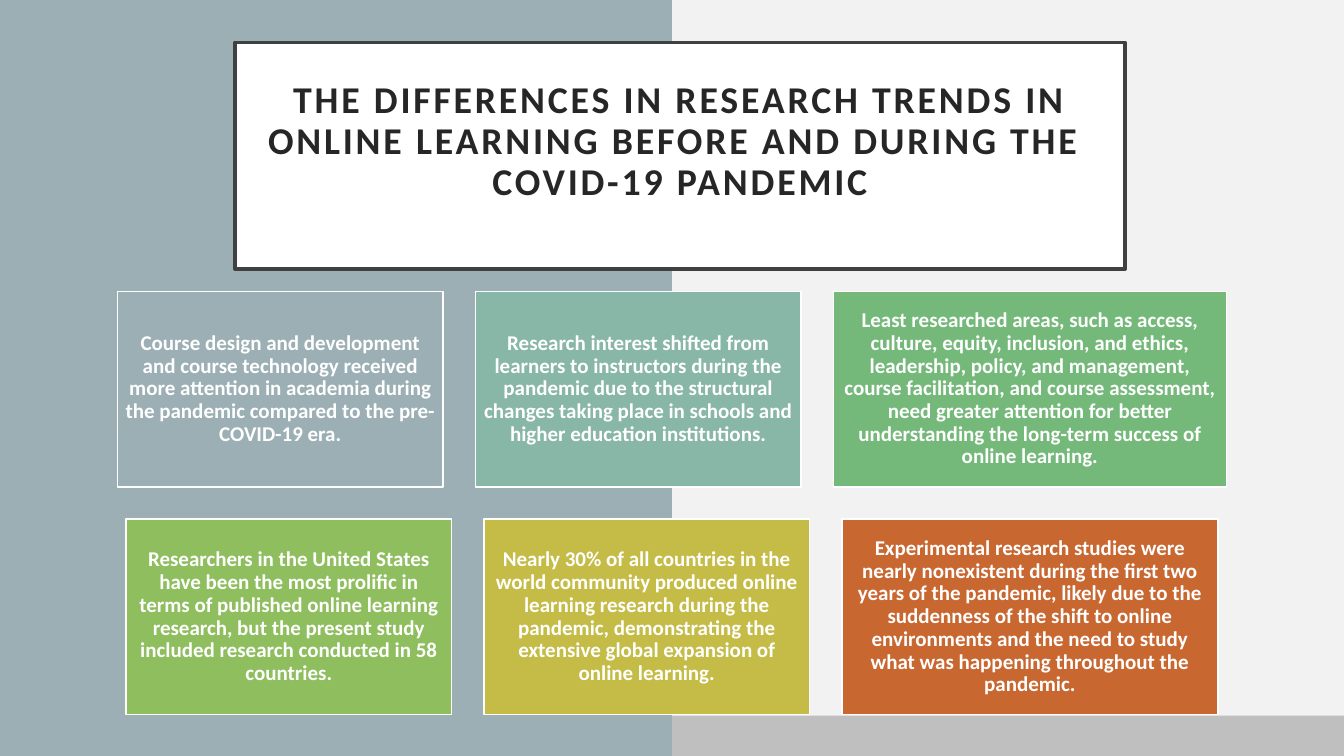
"""Build a slide on research trends in online learning around the pandemic."""
from dataclasses import dataclass

from pptx import Presentation
from pptx import util as u
from pptx.dml.color import RGBColor
from pptx.enum import shapes, text
from pptx.shapes.autoshape import Shape
from pptx.slide import Slide

SLIDE_WIDTH, SLIDE_HEIGHT = 13.33, 7.5
CARD_HEIGHT, CARD_GAP = 1.94, 0.32
CARDS_TOP = 2.89
TITLE = (
    "THE DIFFERENCES IN RESEARCH TRENDS IN ONLINE LEARNING "
    "BEFORE AND DURING THE \vCOVID-19 PANDEMIC"
)


@dataclass(frozen=True)
class Card:
    """A coloured finding with its own width."""
    wording: str
    fill: str
    width: float = 3.23


CARD_ROWS: list[list[Card]] = [
    [
        Card("Course design and development and course technology received more "
             "attention in academia during the pandemic compared to the "
             "pre-COVID-19 era.", "9BAFB5"),
        Card("Research interest shifted from learners to instructors during the "
             "pandemic due to the structural changes taking place in schools and "
             "higher education institutions.", "88B6A7"),
        Card("Least researched areas, such as access, culture, equity, inclusion, "
             "and ethics, leadership, policy, and management, course facilitation, "
             "and course assessment, need greater attention for better "
             "understanding the long-term success of online learning.",
             "74B97A", 3.9),
    ],
    [
        Card("Researchers in the United States have been the most prolific in "
             "terms of published online learning research, but the present study "
             "included research conducted in 58 countries.", "8EBE5E"),
        Card("Nearly 30% of all countries in the world community produced online "
             "learning research during the pandemic, demonstrating the extensive "
             "global expansion of online learning.", "C4BC47"),
        Card("Experimental research studies were nearly nonexistent during the "
             "first two years of the pandemic, likely due to the suddenness of the "
             "shift to online environments and the need to study what was "
             "happening throughout the pandemic.", "C96731", 3.73),
    ],
]


def color(value: str) -> RGBColor:
    """Turn a hex string into a colour."""
    return RGBColor.from_string(value)


def add_box(slide: Slide, left: float, top: float, width: float, height: float,
            fill: str, line: str | None = None, line_width: float = 1) -> Shape:
    """Add a flat rectangle, outlined when a line colour is given."""
    box = slide.shapes.add_shape(
        shapes.MSO_SHAPE.RECTANGLE,
        u.Inches(left), u.Inches(top), u.Inches(width), u.Inches(height))
    box.shadow.inherit = False
    box.fill.solid()
    box.fill.fore_color.rgb = color(fill)
    if line:
        box.line.color.rgb = color(line)
        box.line.width = u.Pt(line_width)
    else:
        box.line.fill.background()
    return box


def write_text(shape: Shape, wording: str, *, size: float, font_color: str,
               inset: float, bottom_inset: float | None = None,
               letter_spacing: float = 0) -> None:
    """Write bold, centred text into a shape."""
    frame = shape.text_frame
    frame.word_wrap = True
    frame.vertical_anchor = text.MSO_ANCHOR.MIDDLE
    frame.margin_left = frame.margin_right = frame.margin_top = u.Inches(inset)
    frame.margin_bottom = u.Inches(inset if bottom_inset is None else bottom_inset)
    paragraph = frame.paragraphs[0]
    paragraph.text = wording
    paragraph.alignment = text.PP_ALIGN.CENTER
    paragraph.line_spacing = 0.9
    for run in paragraph.runs:
        run.font.name = "Calibri"
        run.font.size = u.Pt(size)
        run.font.bold = True
        run.font.color.rgb = color(font_color)
        if letter_spacing:
            run._r.get_or_add_rPr().set("spc", str(round(letter_spacing * 100)))


def add_card_row(slide: Slide, cards: list[Card], top: float) -> None:
    """Add a row of cards, centred across the slide."""
    row_width = sum(card.width for card in cards) + CARD_GAP * (len(cards) - 1)
    left = (SLIDE_WIDTH - row_width) / 2
    for card in cards:
        box = add_box(slide, left, top, card.width, CARD_HEIGHT, card.fill, "FFFFFF")
        write_text(box, card.wording, size=15, font_color="FFFFFF", inset=0.06)
        left += card.width + CARD_GAP


def main() -> None:
    """Build and save the presentation."""
    presentation = Presentation()
    presentation.slide_width = u.Inches(SLIDE_WIDTH)
    presentation.slide_height = u.Inches(SLIDE_HEIGHT)
    slide = presentation.slides.add_slide(presentation.slide_layouts[6])
    slide.background.fill.solid()
    slide.background.fill.fore_color.rgb = color("F2F2F2")

    add_box(slide, 0, 7.1, SLIDE_WIDTH, 0.4, "BFBFBF")
    add_box(slide, 0, 0, SLIDE_WIDTH / 2, SLIDE_HEIGHT, "9BAFB5")
    title = add_box(slide, 2.33, 0.42, 8.83, 2.25, "FFFFFF", "404040", 2.5)
    write_text(title, TITLE, size=27, font_color="262626", inset=0.2,
               bottom_inset=0.47, letter_spacing=2)
    for index, cards in enumerate(CARD_ROWS):
        add_card_row(slide, cards, CARDS_TOP + index * (CARD_HEIGHT + CARD_GAP))

    presentation.save("out.pptx")


if __name__ == "__main__":
    main()
